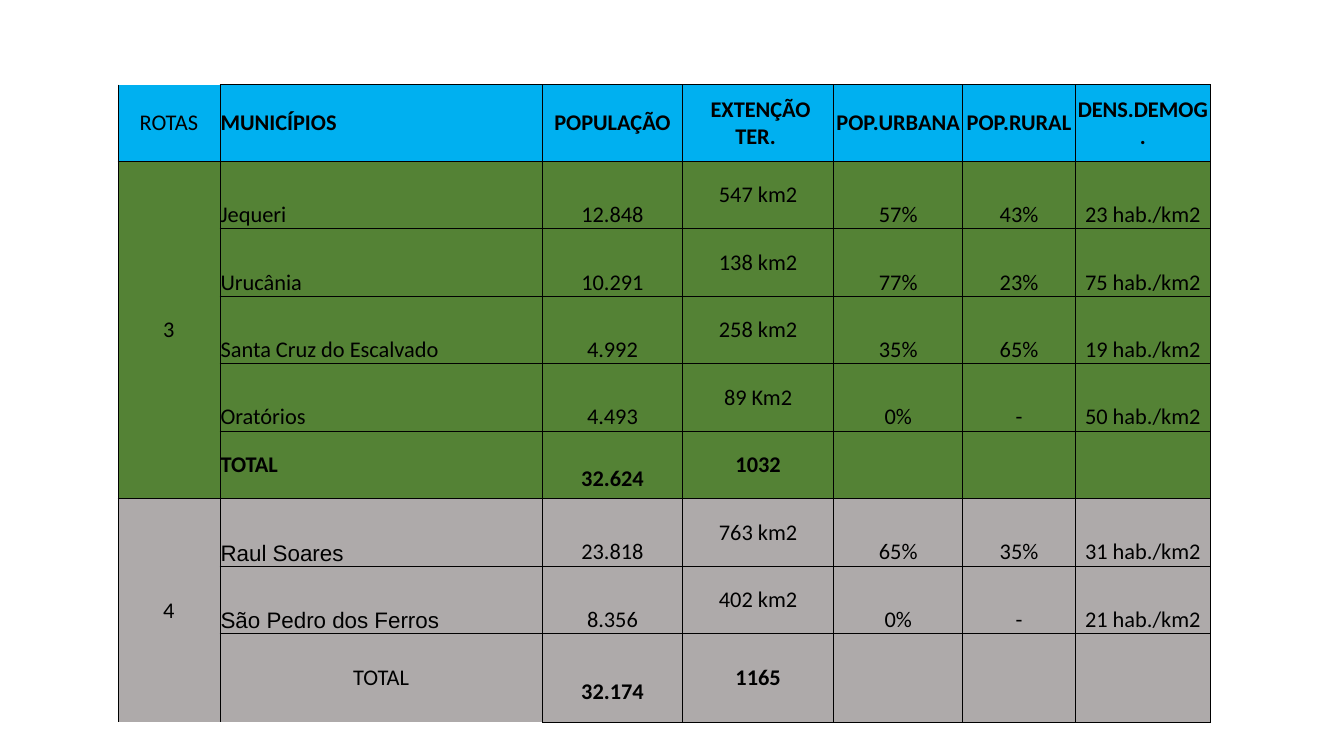
from lxml import etree
from pptx import Presentation
from pptx.dml.color import RGBColor
from pptx.enum import text
from pptx.oxml import ns
from pptx.util import Cm, Pt

BLACK = RGBColor(0x00, 0x00, 0x00)
BLUE = RGBColor(0x00, 0xB0, 0xF0)
GREEN = RGBColor(0x54, 0x82, 0x35)
GREY = RGBColor(0xAE, 0xAA, 0xAA)

COL_WIDTHS = [2.57, 8.13, 3.53, 3.81, 3.25, 2.84, 3.4]
ROW_HEIGHTS = [1.93] + [1.7] * 7 + [2.24]
LINE_HEIGHT = 0.69
POPULATION, AREA = 2, 3

HEADER = ["ROTAS", "MUNICÍPIOS", "POPULAÇÃO", " EXTENÇÃO TER. ",
          "POP.URBANA", "POP.RURAL", "DENS.DEMOG."]
ROUTES = [
    ("3", GREEN, "Calibri", [
        ["Jequeri", "12.848", "547 km2", "57%", "43%", "23 hab./km2"],
        ["Urucânia", "10.291", "138 km2", "77%", "23%", "75 hab./km2"],
        ["Santa Cruz do Escalvado", "4.992", "258 km2", "35%", "65%", "19 hab./km2"],
        ["Oratórios", "4.493", "89 Km2", "0%", "-", "50 hab./km2"],
        ["TOTAL", "32.624", "1032", "", "", ""],
    ]),
    ("4", GREY, "Arial", [
        ["Raul Soares", "23.818", "763 km2", "65%", "35%", "31 hab./km2"],
        ["São Pedro dos Ferros", "8.356", "402 km2", "0%", "-", "21 hab./km2"],
        ["TOTAL", "32.174", "1165", "", "", ""],
    ]),
]
OPEN_EDGES = {(0, 0): "LRB", (6, 0): "LRT", (8, 1): "LRT"}


def set_borders(cell, edges):
    """Draw thin black lines on the given edges (L, R, T, B) and none elsewhere."""
    tc_pr = cell._tc.get_or_add_tcPr()
    for edge in "LRTB":
        ln = etree.SubElement(tc_pr, ns.qn(f"a:ln{edge}"), w=str(Pt(0.5)))
        if edge in edges:
            fill = etree.SubElement(ln, ns.qn("a:solidFill"))
            etree.SubElement(fill, ns.qn("a:srgbClr"), val=str(BLACK))
        else:
            etree.SubElement(ln, ns.qn("a:noFill"))


def fill_cell(cell, words, color, edges, anchor=text.MSO_ANCHOR.MIDDLE,
              align=text.PP_ALIGN.CENTER, bold=False, font="Calibri", bottom=0):
    set_borders(cell, edges)
    cell.fill.solid()
    cell.fill.fore_color.rgb = color
    cell.margin_left = cell.margin_right = cell.margin_top = Cm(0.02)
    cell.margin_bottom = Cm(bottom)
    cell.vertical_anchor = anchor
    p = cell.text_frame.paragraphs[0]
    p.alignment = align
    p.font.name, p.font.size, p.font.bold = font, Pt(16), bold
    p.font.color.rgb = BLACK
    if words:
        p.add_run().text = words


def add_header(table):
    for col, words in enumerate(HEADER):
        align = text.PP_ALIGN.LEFT if col == 1 else text.PP_ALIGN.CENTER
        fill_cell(table.cell(0, col), words, BLUE, OPEN_EDGES.get((0, col), "LRTB"),
                  align=align, bold=col > 0)


def add_municipality(table, row, values, color, font):
    for col, words in enumerate(values, 1):
        fill_cell(table.cell(row, col), words, color, "LRTB",
                  anchor=text.MSO_ANCHOR.MIDDLE if col == AREA else text.MSO_ANCHOR.BOTTOM,
                  align=text.PP_ALIGN.LEFT if col == 1 else text.PP_ALIGN.CENTER,
                  font=font if col == 1 else "Calibri")


def add_total(table, row, values, color):
    """The population total sits half a line below the middle of its row."""
    last = row == len(ROW_HEIGHTS) - 1
    for col, words in enumerate(values, 1):
        style = {"bold": not (last and col == 1)}
        if col == 1 and not last:
            style["align"] = text.PP_ALIGN.LEFT
        if col == POPULATION:
            style["anchor"] = text.MSO_ANCHOR.BOTTOM
            style["bottom"] = round(ROW_HEIGHTS[row] / 2 - LINE_HEIGHT, 2)
        fill_cell(table.cell(row, col), words, color,
                  OPEN_EDGES.get((row, col), "LRTB"), **style)


def add_route(table, first, name, color, font, rows):
    last = first + len(rows) - 1
    table.cell(first, 0).merge(table.cell(last, 0))
    for row, values in enumerate(rows, first):
        if row == first:
            fill_cell(table.cell(row, 0), name, color, OPEN_EDGES.get((row, 0), "LRTB"))
        else:
            fill_cell(table.cell(row, 0), "", color, "LR")
        if row == last:
            add_total(table, row, values, color)
        else:
            add_municipality(table, row, values, color, font)


def add_routes_table(slide):
    table = slide.shapes.add_table(
        len(ROW_HEIGHTS), len(COL_WIDTHS), Cm(2.97), Cm(2.13),
        Cm(sum(COL_WIDTHS)), Cm(sum(ROW_HEIGHTS))).table
    table.first_row = table.horz_banding = False
    for column, width in zip(table.columns, COL_WIDTHS):
        column.width = Cm(width)
    for row, height in zip(table.rows, ROW_HEIGHTS):
        row.height = Cm(height)
    add_header(table)
    first = 1
    for name, color, font, rows in ROUTES:
        add_route(table, first, name, color, font, rows)
        first += len(rows)


def main():
    prs = Presentation()
    prs.slide_width, prs.slide_height = Cm(33.87), Cm(19.05)
    slide = prs.slides.add_slide(prs.slide_layouts[6])
    add_routes_table(slide)
    prs.save("out.pptx")


if __name__ == "__main__":
    main()
